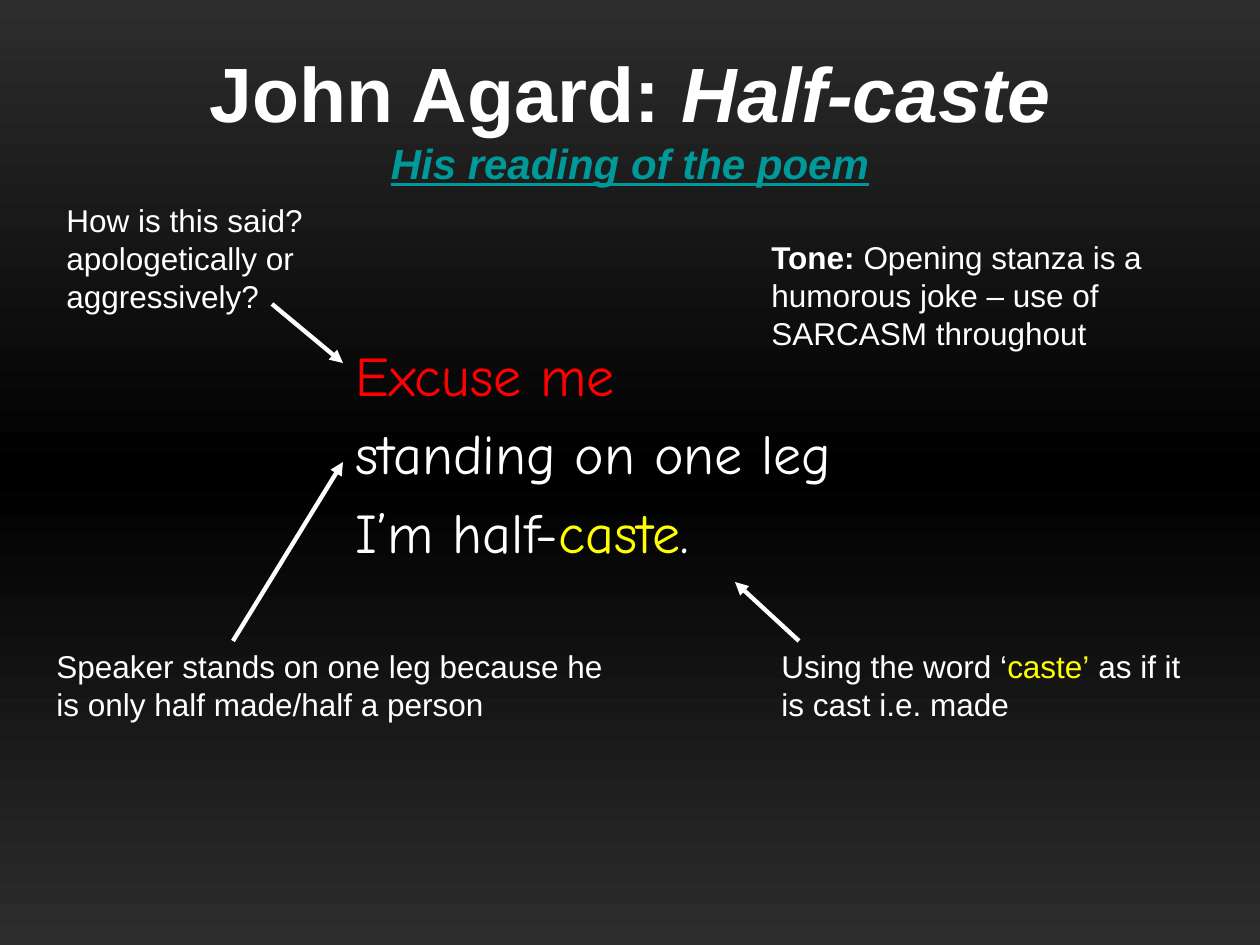
from copy import deepcopy
from dataclasses import dataclass

from pptx import Presentation
from pptx.dml.color import RGBColor
from pptx.enum import shapes, text
from pptx.oxml.xmlchemy import OxmlElement
from pptx import util as u

PX = 914400 / 126  # EMU in one px

WHITE = RGBColor(0xFF, 0xFF, 0xFF)
RED = RGBColor(0xFF, 0x00, 0x00)
YELLOW = RGBColor(0xFF, 0xFF, 0x00)
TEAL = RGBColor(0x00, 0x99, 0x99)
BLACK = RGBColor(0x00, 0x00, 0x00)
CHARCOAL = RGBColor(0x2D, 0x2D, 0x2D)

HEADING_FONT = "Arial"
POEM_FONT = "Comic Neue"


@dataclass(frozen=True)
class Span:
    words: str
    color: RGBColor = WHITE
    bold: bool = False
    italic: bool = False
    underline: bool = False


@dataclass(frozen=True)
class Note:
    left: int
    top: int
    width: int
    height: int
    spans: tuple[Span, ...]


@dataclass(frozen=True)
class Arrow:
    x1: int
    y1: int
    x2: int
    y2: int


POEM = (
    (Span("Excuse me", RED),),
    (Span("standing on one leg"),),
    (Span("I’m half-"), Span("caste", YELLOW), Span(".")),
)
NOTES = (
    Note(54, 195, 387, 126, (Span("How is this said? apologetically or aggressively?"),)),
    Note(759, 232, 437, 127, (
        Span("Tone: ", bold=True),
        Span("Opening stanza is a humorous joke – use of SARCASM throughout"),
    )),
    Note(44, 641, 576, 88, (
        Span("Speaker stands on one leg because he is only half made/half a person"),
    )),
    Note(769, 641, 446, 88, (
        Span("Using the word ‘"),
        Span("caste’", YELLOW),
        Span(" as if it is cast i.e. made"),
    )),
)
ARROWS = (
    Arrow(272, 304, 343, 363),
    Arrow(233, 641, 343, 462),
    Arrow(799, 641, 735, 582),
)


def px(length: int) -> u.Emu:
    return u.Emu(round(length * PX))


def place(box, left: int, top: int, width: int, height: int) -> None:
    box.left, box.top, box.width, box.height = map(px, (left, top, width, height))


def add_span(para, span: Span, size: int, font_name: str) -> None:
    run = para.add_run()
    run.text = span.words
    font = run.font
    font.name, font.size = font_name, u.Pt(size)
    font.bold, font.italic, font.underline = span.bold, span.italic, span.underline
    font.color.rgb = span.color


def paint_background(page) -> None:
    fill = page.background.fill
    fill.gradient()
    fill.gradient_angle = 90
    stop_list = fill._fill._gradFill.gsLst
    stop_list.insert(1, deepcopy(stop_list[0]))
    colors = (CHARCOAL, BLACK, CHARCOAL)
    for stop, position, color in zip(fill.gradient_stops, (0, 0.5, 1), colors):
        stop.position = position
        stop.color.rgb = color


def fill_title(box) -> None:
    place(box, 63, 38, 1134, 158)
    frame = box.text_frame
    frame.auto_size = text.MSO_AUTO_SIZE.NONE
    frame.vertical_anchor = text.MSO_ANCHOR.MIDDLE
    para = frame.paragraphs[0]
    para.alignment = text.PP_ALIGN.CENTER
    add_span(para, Span("John Agard: ", bold=True), 44, HEADING_FONT)
    add_span(para, Span("Half-caste", bold=True, italic=True), 44, HEADING_FONT)
    para.add_line_break()
    subtitle = Span("His reading of the poem", TEAL, bold=True, italic=True, underline=True)
    add_span(para, subtitle, 24, HEADING_FONT)


def fill_poem(box) -> None:
    place(box, 343, 334, 714, 268)
    frame = box.text_frame
    frame.auto_size = text.MSO_AUTO_SIZE.NONE
    for index, verse in enumerate(POEM):
        para = frame.add_paragraph() if index else frame.paragraphs[0]
        # Hanging indent without a bullet
        properties = para._p.get_or_add_pPr()
        properties.set("marL", str(px(48)))
        properties.set("indent", str(px(-48)))
        properties.append(OxmlElement("a:buNone"))
        for span in verse:
            add_span(para, span, 32, POEM_FONT)


def add_note(page, note: Note) -> None:
    box = page.shapes.add_textbox(
        px(note.left), px(note.top), px(note.width), px(note.height)
    )
    frame = box.text_frame
    frame.word_wrap = True
    frame.auto_size = text.MSO_AUTO_SIZE.SHAPE_TO_FIT_TEXT
    for span in note.spans:
        add_span(frame.paragraphs[0], span, 18, HEADING_FONT)


def add_arrow(page, arrow: Arrow) -> None:
    connector = page.shapes.add_connector(
        shapes.MSO_CONNECTOR.STRAIGHT,
        px(arrow.x1), px(arrow.y1), px(arrow.x2), px(arrow.y2),
    )
    connector.line.color.rgb = WHITE
    connector.line.width = u.Pt(2.5)
    tip = OxmlElement("a:tailEnd")
    tip.set("type", "triangle")
    connector.line._get_or_add_ln().append(tip)
    connector._element.spPr.append(OxmlElement("a:effectLst"))


def main() -> None:
    deck = Presentation()
    deck.slide_width, deck.slide_height = px(1260), px(945)
    page = deck.slides.add_slide(deck.slide_layouts[1])
    paint_background(page)

    # Title and poem
    fill_title(page.shapes.title)
    fill_poem(page.placeholders[1])

    # Notes around the poem, with arrows to its lines
    for note in NOTES:
        add_note(page, note)
    for arrow in ARROWS:
        add_arrow(page, arrow)

    deck.save("out.pptx")


if __name__ == "__main__":
    main()
